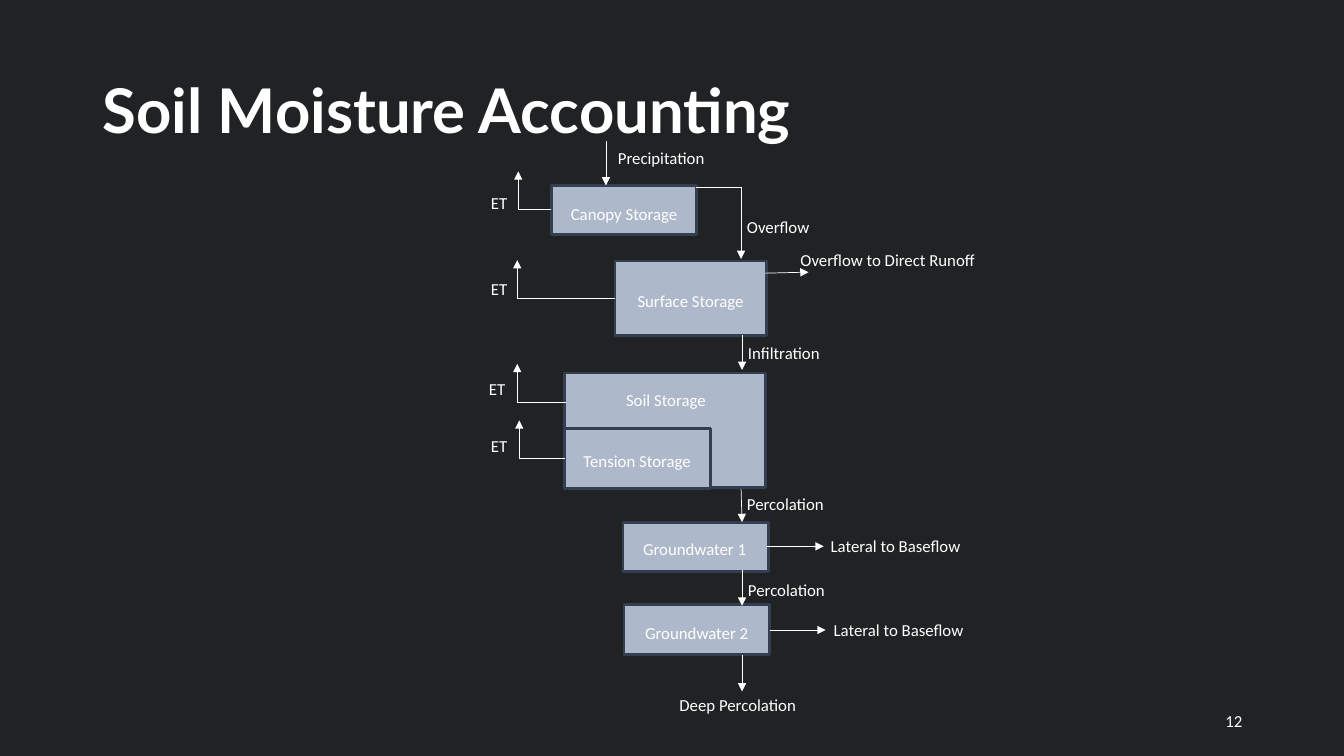
import pptx
import pptx.dml.color
import pptx.enum.shapes
import pptx.enum.text
import pptx.oxml.ns
import pptx.util
from lxml import etree

RGBColor = pptx.dml.color.RGBColor
BACKGROUND = RGBColor(0x20, 0x22, 0x23)
WHITE = RGBColor(0xFF, 0xFF, 0xFF)
STORAGE = RGBColor(0xAD, 0xB9, 0xCA)
BORDER = RGBColor(0x33, 0x3F, 0x50)
ALIGN = pptx.enum.text.PP_ALIGN
ANCHOR = pptx.enum.text.MSO_ANCHOR
AUTO_SIZE = pptx.enum.text.MSO_AUTO_SIZE
RECTANGLE = pptx.enum.shapes.MSO_SHAPE.RECTANGLE
STRAIGHT = pptx.enum.shapes.MSO_CONNECTOR.STRAIGHT


class FlowPage:
    """Draws a storage flow diagram on a grid of ten cells to the inch."""

    cell = pptx.util.Inches(0.1)
    font = "Calibri"
    size = 12

    def __init__(self, deck):
        self.page = deck.slides.add_slide(deck.slide_layouts[5])
        self.page.background.fill.solid()
        self.page.background.fill.fore_color.rgb = BACKGROUND

    def grid(self, *cells):
        return [round(count * self.cell) for count in cells]

    def set_text(self, box, text, align=ALIGN.LEFT, font=font, size=size, bold=False):
        box.text_frame.word_wrap = True
        para = box.text_frame.paragraphs[0]
        para.text = text
        para.alignment = align
        para.font.name = font
        para.font.size = pptx.util.Pt(size)
        para.font.bold = bold
        para.font.color.rgb = WHITE
        return para

    def title(self, text, left, top, width, height):
        box = self.page.shapes.title
        box.left, box.top, box.width, box.height = self.grid(left, top, width, height)
        box.text_frame.auto_size = AUTO_SIZE.NONE
        box.text_frame.vertical_anchor = ANCHOR.MIDDLE
        self.set_text(box, text, font="Lato", size=44, bold=True).line_spacing = 0.9

    def number(self, text, left, top, width, height):
        box = self.page.shapes.add_textbox(*self.grid(left, top, width, height))
        box.text_frame.vertical_anchor = ANCHOR.MIDDLE
        self.set_text(box, text, ALIGN.RIGHT)

    def label(self, text, left, top, width, height=2.6):
        box = self.page.shapes.add_textbox(*self.grid(left, top, width, height))
        box.text_frame.auto_size = AUTO_SIZE.SHAPE_TO_FIT_TEXT
        self.set_text(box, text)

    def rectangle(self, left, top, width, height):
        box = self.page.shapes.add_shape(RECTANGLE, *self.grid(left, top, width, height))
        box.shadow.inherit = False
        box.fill.solid()
        box.fill.fore_color.rgb = STORAGE
        box.line.fill.background()
        return box

    def storage(self, name, left, top, width, height, name_left, name_top, name_width):
        frame = self.rectangle(left, top, width, height)
        frame.line.color.rgb = BORDER
        frame.line.width = pptx.util.Pt(2)
        plate = self.rectangle(name_left, name_top, name_width, 2.5)
        plate.text_frame.vertical_anchor = ANCHOR.TOP
        plate.text_frame.auto_size = AUTO_SIZE.SHAPE_TO_FIT_TEXT
        self.set_text(plate, name, ALIGN.CENTER)

    def line(self, start, end, arrow=True):
        connector = self.page.shapes.add_connector(
            STRAIGHT, *self.grid(*start), *self.grid(*end))
        connector.line.color.rgb = WHITE
        connector.line.width = pptx.util.Pt(0.5)
        properties = connector._element.spPr
        if arrow:
            tail = etree.SubElement(properties.get_or_add_ln(), pptx.oxml.ns.qn("a:tailEnd"))
            tail.set("type", "triangle")
        etree.SubElement(properties, pptx.oxml.ns.qn("a:effectLst"))

    def bend(self, start, end):
        corner = (end[0], start[1])
        self.line(start, corner, arrow=False)
        self.line(corner, end)


def main():
    deck = pptx.Presentation()
    deck.slide_width = pptx.util.Inches(13.33)
    deck.slide_height = pptx.util.Inches(7.5)
    flow = FlowPage(deck)
    flow.title("Soil Moisture Accounting", 9.2, 4, 115, 14.5)
    flow.number("12", 94.2, 69.5, 30, 4)

    for storage in (
        ("Canopy Storage", 54.7, 18.4, 14.4, 4.9, 55, 19.7, 13.8),
        ("Surface Storage", 61, 25.9, 15, 7.4, 61.7, 28.3, 13.6),
        ("Soil Storage", 56, 37, 19.9, 11.4, 58.8, 38.2, 14.5),
        ("Tension Storage", 56, 42.5, 14.5, 6, 56.4, 44.2, 13.6),
        ("Groundwater 1", 61.8, 51.8, 14.4, 4.9, 62, 53, 13.8),
        ("Groundwater 2", 61.9, 60, 14.4, 4.9, 62.2, 61.3, 13.8),
    ):
        flow.storage(*storage)

    for edge, level, riser, label_left, label_top in (
        (54.7, 20.8, 51.4, 47.7, 18.6),
        (61, 29.6, 51.3, 47.7, 27.2),
        (56.1, 39.9, 51.3, 47.5, 37.1),
        (56, 45.5, 51.5, 47.7, 42.7),
    ):
        flow.bend((edge, level), (riser, level - 3.8))
        flow.label("ET", label_left, label_top, 3.8)

    flow.bend((69, 18.6), (73.5, 25.7))
    for start, end in (
        ((60.1, 14), (60.1, 18.4)),
        ((73.6, 33.2), (73.6, 36.7)),
        ((73.5, 48.5), (73.6, 51.8)),
        ((73.6, 56.5), (73.6, 60.1)),
        ((73.6, 65), (73.6, 68.6)),
        ((75.9, 27.1), (80.2, 27)),
        ((76.1, 54.2), (81.7, 54.2)),
        ((76.4, 62.5), (81.9, 62.5)),
    ):
        flow.line(start, end)

    for label in (
        ("Precipitation", 60.3, 14.2, 11.1),
        ("Overflow", 73.1, 21, 10),
        ("Overflow to Direct Runoff", 78.4, 24.3, 19.9),
        ("Infiltration", 73.2, 33.5, 9.5),
        ("Percolation", 73.1, 48.5, 10.5),
        ("Percolation", 73.2, 57, 10.5),
        ("Lateral to Baseflow", 81.4, 52.7, 15.2),
        ("Lateral to Baseflow", 81.7, 61, 15.2),
        ("Deep Percolation", 66.4, 68.4, 15.2),
    ):
        flow.label(*label)

    deck.save("out.pptx")


if __name__ == "__main__":
    main()
